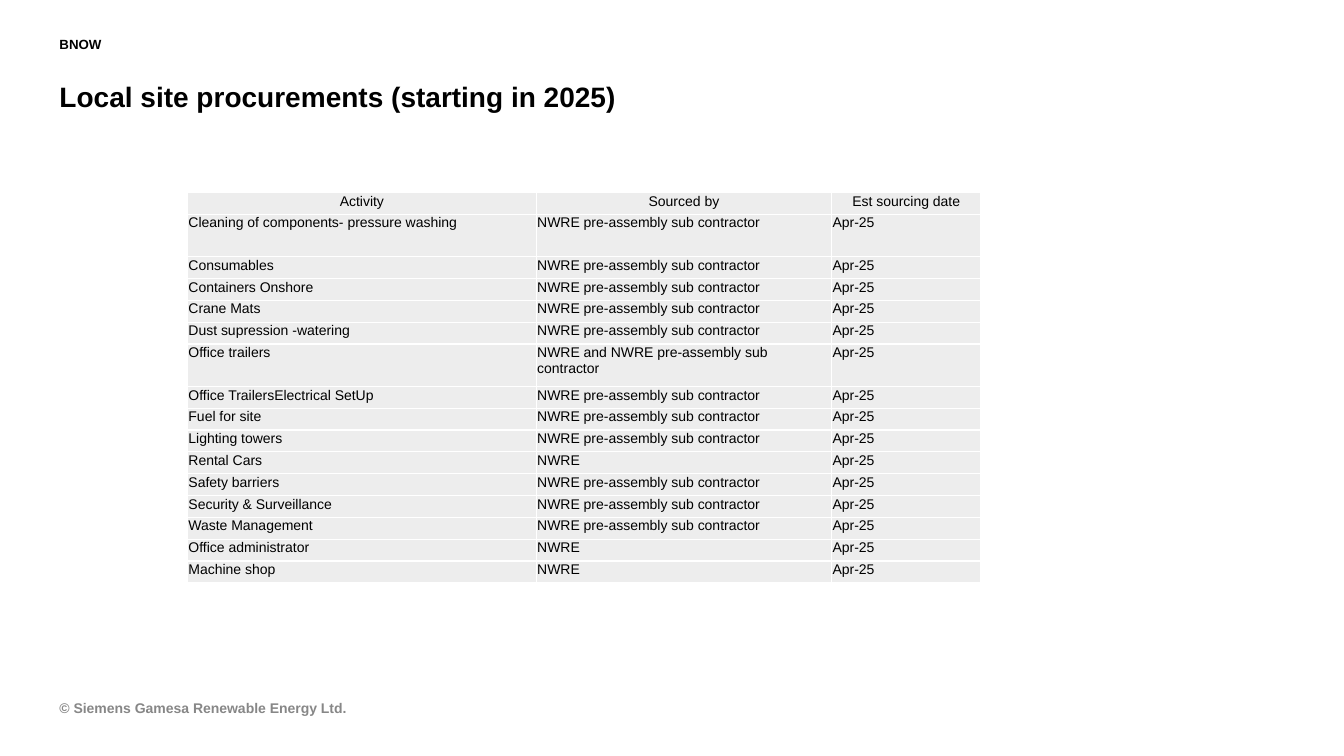
"""Build the slide on local site procurements."""
from dataclasses import dataclass

from lxml import etree
from pptx import Presentation
from pptx.dml.color import RGBColor
from pptx.enum.text import MSO_ANCHOR, PP_ALIGN
from pptx.oxml.ns import qn
from pptx.slide import Slide
from pptx.table import _Cell
from pptx.text.text import TextFrame
from pptx.util import Emu, Inches, Pt

LEFT, MID = PP_ALIGN.LEFT, PP_ALIGN.CENTER
TOP = MSO_ANCHOR.TOP
COLS, ROWS = 160, 90
WIDE, HIGH = Inches(13.33), Inches(7.5)


@dataclass(frozen=True)
class Theme:
    """Colours, font and type sizes."""
    font: str = "Arial"
    ink: str = "000000"
    mute: str = "878787"
    fill: str = "EDEDED"
    rule: str = "FFFFFF"
    line: float = 1
    title: float = 20
    body: float = 10
    tag: float = 9.5


@dataclass(frozen=True)
class Label:
    """A line of bold text at a place on the grid."""
    text: str
    top: float
    width: float
    height: float
    size: float
    color: str
    space: float = 1


@dataclass(frozen=True)
class Item:
    """One row of the procurement table."""
    name: str
    source: str
    date: str = "Apr-25"
    tall: bool = False
    align: PP_ALIGN = LEFT


THEME = Theme()
EDGE = 7.08
LABELS = (
    Label("© Siemens Gamesa Renewable Energy Ltd.", 83.28, 45.96, 2.04, THEME.body, THEME.mute),
    Label("Local site procurements (starting in 2025)", 9.96, 109.8, 4.44, THEME.title, THEME.ink, 0.9),
    Label("BNOW", 4.44, 109.8, 2.4, THEME.tag, THEME.ink, 0.95),
)

OWN = "NWRE"
SUB = f"{OWN} pre-assembly sub contractor"
ITEMS = (
    Item("Activity", "Sourced by", "Est sourcing date", align=MID),
    Item("Cleaning of components- pressure washing", SUB, tall=True),
    Item("Consumables", SUB),
    Item("Containers Onshore", SUB),
    Item("Crane Mats", SUB),
    Item("Dust supression -watering", SUB),
    Item("Office trailers", f"{OWN} and {SUB}", tall=True),
    Item("Office TrailersElectrical SetUp", SUB),
    Item("Fuel for site", SUB),
    Item("Lighting towers", SUB),
    Item("Rental Cars", OWN),
    Item("Safety barriers", SUB),
    Item("Security & Surveillance", SUB),
    Item("Waste Management", SUB),
    Item("Office administrator", OWN),
    Item("Machine shop", OWN),
)
WIDTHS = (41.52, 35.16, 17.76)
SHORT, TALL = 2.6, 5.05
INSET = 0.12


def col(n: float) -> Emu:
    """Turn grid columns into a length."""
    return Emu(round(WIDE * n / COLS))


def row(n: float) -> Emu:
    """Turn grid rows into a length."""
    return Emu(round(HIGH * n / ROWS))


def write(frame: TextFrame, text: str, *, size: float, color: str = THEME.ink,
          bold: bool = False, align: PP_ALIGN = LEFT, space: float = 1) -> None:
    """Put one formatted paragraph into a frame."""
    para = frame.paragraphs[0]
    para.alignment, para.line_spacing = align, space
    run = para.add_run()
    run.text = text
    font = run.font
    font.name, font.size, font.bold = THEME.font, Pt(size), bold
    font.color.rgb = RGBColor.from_string(color)


def place(slide: Slide, label: Label) -> None:
    """Draw a label at the left edge."""
    box = slide.shapes.add_textbox(col(EDGE), row(label.top), col(label.width), row(label.height))
    frame = box.text_frame
    frame.word_wrap, frame.vertical_anchor = True, TOP
    frame.margin_left = frame.margin_right = frame.margin_top = frame.margin_bottom = 0
    write(frame, label.text, size=label.size, color=label.color, bold=True, space=label.space)


def style(cell: _Cell) -> None:
    """Set the insets, borders and fill of a cell."""
    cell.margin_left = cell.margin_right = col(INSET)
    cell.margin_top, cell.margin_bottom = row(INSET), 0
    cell.vertical_anchor = TOP
    props = cell._tc.get_or_add_tcPr()
    for side in ("a:lnL", "a:lnR", "a:lnT", "a:lnB"):
        line = etree.SubElement(props, qn(side), w=str(Pt(THEME.line)))
        fill = etree.SubElement(line, qn("a:solidFill"))
        etree.SubElement(fill, qn("a:srgbClr"), val=THEME.rule)
    cell.fill.solid()
    cell.fill.fore_color.rgb = RGBColor.from_string(THEME.fill)


def draw(slide: Slide, items: tuple[Item, ...]) -> None:
    """Draw the procurement table."""
    spans = [TALL if item.tall else SHORT for item in items]
    shape = slide.shapes.add_table(len(items), len(WIDTHS), col(22.32), row(22.92),
                                   col(sum(WIDTHS)), row(sum(spans)))
    table = shape.table
    table.first_row = table.horz_banding = False
    for column, width in zip(table.columns, WIDTHS):
        column.width = col(width)
    for line, item, span in zip(table.rows, items, spans):
        line.height = row(span)
        for cell, text in zip(line.cells, (item.name, item.source, item.date)):
            style(cell)
            write(cell.text_frame, text, size=THEME.body, align=item.align)


def main() -> None:
    """Build and save the slide."""
    deck = Presentation()
    deck.slide_width, deck.slide_height = WIDE, HIGH
    slide = deck.slides.add_slide(deck.slide_layouts[6])
    for label in LABELS:
        place(slide, label)
    draw(slide, ITEMS)
    deck.save("out.pptx")


if __name__ == "__main__":
    main()
